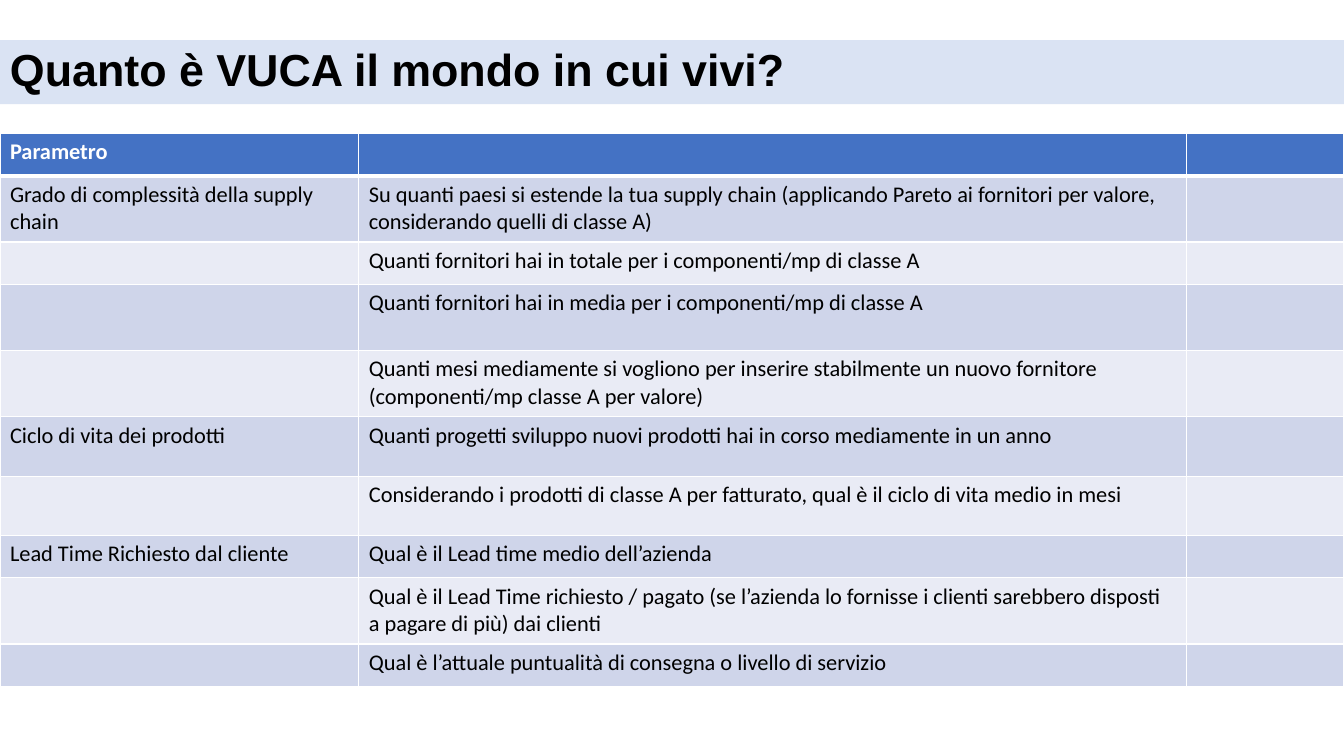
from pptx import Presentation
from pptx.dml.color import RGBColor as RGB
from pptx.enum.shapes import MSO_SHAPE as Shape
from pptx.enum.text import MSO_ANCHOR as Anchor, PP_ALIGN as Align
from pptx.oxml import parse_xml
from pptx.oxml.ns import nsdecls
from pptx.util import Pt

BLACK = RGB(0, 0, 0)
WHITE = RGB(255, 255, 255)
BLUE = RGB(0x44, 0x72, 0xC4)
PALE = RGB(0xDA, 0xE3, 0xF3)
BANDS = RGB(0xE9, 0xEB, 0xF5), RGB(0xCF, 0xD5, 0xEA)

WIDE = 960
COLS = 256.3, 591.2, 112.5
LOW, MID, TALL = 30.3, 42.4, 47.3
ROWS = [
    (LOW, "Parametro", ""),
    (TALL, "Grado di complessità della supply chain",
     "Su quanti paesi si estende la tua supply chain (applicando Pareto ai "
     "fornitori per valore, considerando quelli di classe A)"),
    (LOW, "", "Quanti fornitori hai in totale per i componenti/mp di classe A"),
    (TALL, "", "Quanti fornitori hai in media per i componenti/mp di classe A"),
    (TALL, "", "Quanti mesi mediamente si vogliono per inserire stabilmente un "
     "nuovo fornitore (componenti/mp classe A per valore)"),
    (MID, "Ciclo di vita dei prodotti",
     "Quanti progetti sviluppo nuovi prodotti hai in corso mediamente in un anno"),
    (MID, "", "Considerando i prodotti di classe A per fatturato, qual è il "
     "ciclo di vita medio in mesi"),
    (LOW, "Lead Time Richiesto dal cliente",
     "Qual è il Lead time medio dell’azienda"),
    (TALL, "", "Qual è il Lead Time richiesto / pagato (se l’azienda lo fornisse "
     "i clienti sarebbero disposti a pagare di più) dai clienti"),
    (LOW, "", "Qual è l’attuale puntualità di consegna o livello di servizio"),
]


class Deck:
    """Holds the text styles and the current slide."""

    title = {"name": "Arial", "size": Pt(32), "bold": True}
    head = {"name": "Calibri", "size": Pt(16), "bold": True}
    body = {"name": "Calibri", "size": Pt(16), "bold": False}

    def __init__(self, show):
        self.slide = show.slides.add_slide(show.slide_layouts[6])

    def label(self, par, text, style, color):
        font = par.font
        if text:
            run = par.add_run()
            run.text = text
            font = run.font
        for key, value in style.items():
            setattr(font, key, value)
        font.color.rgb = color

    def banner(self, text, top, high):
        box = self.slide.shapes.add_shape(
            Shape.RECTANGLE, 0, Pt(top), Pt(WIDE), Pt(high))
        box.shadow.inherit = False
        box.fill.solid()
        box.fill.fore_color.rgb = PALE
        box.line.fill.background()
        frame = box.text_frame
        frame.word_wrap = True
        frame.vertical_anchor = Anchor.MIDDLE
        par = frame.paragraphs[0]
        par.alignment = Align.LEFT
        par.line_spacing = 0.9
        self.label(par, text, self.title, BLACK)

    def edge(self, cell, sides):
        props = cell._tc.get_or_add_tcPr()
        for spot, (side, width) in enumerate(sides.items()):
            props.insert(spot, parse_xml(
                f'<a:ln{side} {nsdecls("a")} w="{Pt(width)}"><a:solidFill>'
                f'<a:srgbClr val="{WHITE}"/></a:solidFill></a:ln{side}>'))

    def table(self, rows, top):
        high = sum(row[0] for row in rows)
        frame = self.slide.shapes.add_table(
            len(rows), len(COLS), 0, Pt(top), Pt(WIDE), Pt(high))
        grid = frame.table
        for col, width in zip(grid.columns, COLS):
            col.width = Pt(width)
        for r, (tall, *texts) in enumerate(rows):
            grid.rows[r].height = Pt(tall)
            style, color = (self.body, BLACK) if r else (self.head, WHITE)
            sides = {"L": 1, "R": 1, "T": 3 if r == 1 else 1, "B": 1 if r else 3}
            for c, text in enumerate([*texts, ""]):
                cell = grid.cell(r, c)
                cell.fill.solid()
                cell.fill.fore_color.rgb = BANDS[r % 2] if r else BLUE
                self.edge(cell, sides)
                self.label(cell.text_frame.paragraphs[0], text, style, color)


def main():
    show = Presentation()
    show.slide_width, show.slide_height = Pt(WIDE), Pt(540)
    deck = Deck(show)
    deck.table(ROWS, 95.3)
    deck.banner("Quanto è VUCA il mondo in cui vivi?", 28.6, 45.8)
    show.save("out.pptx")


if __name__ == "__main__":
    main()
